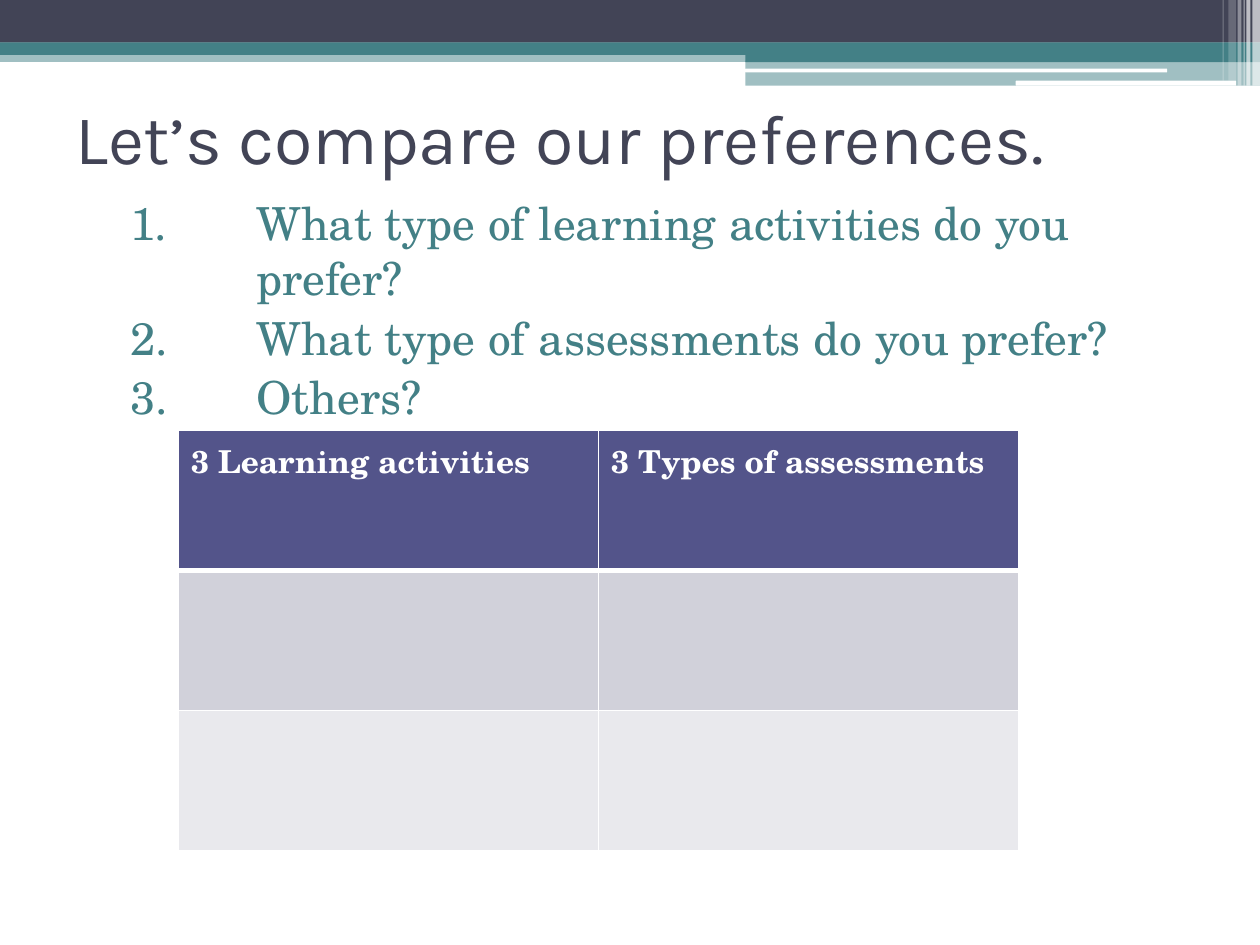
from lxml import etree
from pptx import Presentation
from pptx import util as u
from pptx.dml.color import RGBColor
from pptx.enum import shapes, text
from pptx.oxml import ns

SLATE = RGBColor(0x42, 0x44, 0x56)
TEAL = RGBColor(0x43, 0x80, 0x86)
WHITE = RGBColor(0xFF, 0xFF, 0xFF)
INDIGO = RGBColor(0x53, 0x54, 0x8A)
LAVENDER = RGBColor(0xD1, 0xD1, 0xDA)
PALE = RGBColor(0xE9, 0xE9, 0xED)

HEADING = {"name": "Karla", "size": u.Pt(40), "color": SLATE}
QUESTION = {"name": "TeX Gyre Schola", "size": u.Pt(26), "color": TEAL}
COLUMN_HEAD = {"name": "TeX Gyre Schola", "size": u.Pt(18), "color": WHITE, "bold": True}

RECT = shapes.MSO_SHAPE.RECTANGLE
ROUNDED = shapes.MSO_SHAPE.ROUNDED_RECTANGLE


def add_child(parent, tag, **attributes):
    return etree.SubElement(parent, ns.qn(tag), attributes)


class SlideBuilder:
    def __init__(self, slide):
        self.slide = slide

    def style(self, font, values):
        for key, value in values.items():
            if key == "color":
                font.color.rgb = value
            else:
                setattr(font, key, value)

    def bar(self, left, top, width, height, color, opacity=100, outline=RECT):
        bar = self.slide.shapes.add_shape(outline, *map(u.Pt, (left, top, width, height)))
        bar.shadow.inherit = False
        bar.line.fill.background()
        bar.fill.solid()
        bar.fill.fore_color.rgb = color
        if opacity < 100:
            srgb = bar.fill._xPr.find(".//" + ns.qn("a:srgbClr"))
            add_child(srgb, "a:alpha", val=str(opacity * 1000))

    def text(self, box, lines, values, anchor, numbered=False):
        frame = self.slide.shapes.add_textbox(*map(u.Pt, box)).text_frame
        frame.word_wrap = True
        frame.vertical_anchor = anchor
        for index, line in enumerate(lines):
            paragraph = frame.add_paragraph() if index else frame.paragraphs[0]
            run = paragraph.add_run()
            run.text = line
            self.style(run.font, values)
            if numbered:
                paragraph.space_before = u.Pt(3)
                self.number(paragraph)

    def number(self, paragraph):
        properties = paragraph._p.get_or_add_pPr()
        properties.set("marL", str(u.Pt(103.5)))
        properties.set("indent", str(u.Pt(-72)))
        color = add_child(properties, "a:buClr")
        add_child(color, "a:srgbClr", val=str(TEAL))
        add_child(properties, "a:buFont", typeface=QUESTION["name"])
        add_child(properties, "a:buAutoNum", type="arabicPeriod")

    def table(self, box, headings, row_count, fills):
        grid = self.slide.shapes.add_table(row_count, len(headings), *map(u.Pt, box)).table
        for row in range(row_count):
            for column, heading in enumerate(headings):
                cell = grid.cell(row, column)
                cell.fill.solid()
                cell.fill.fore_color.rgb = fills[row]
                self.borders(cell, top=3 if row == 1 else 1, bottom=1 if row else 3)
                if row == 0:
                    run = cell.text_frame.paragraphs[0].add_run()
                    run.text = heading
                    self.style(run.font, COLUMN_HEAD)

    def borders(self, cell, top, bottom):
        properties = cell._tc.get_or_add_tcPr()
        widths = {"a:lnL": 1, "a:lnR": 1, "a:lnT": top, "a:lnB": bottom}
        for position, (tag, width) in enumerate(widths.items()):
            edge = add_child(properties, tag, w=str(u.Pt(width)))
            add_child(add_child(edge, "a:solidFill"), "a:srgbClr", val=str(WHITE))
            properties.insert(position, edge)


def main():
    deck = Presentation()
    deck.slide_width, deck.slide_height = u.Pt(720), u.Pt(540)
    builder = SlideBuilder(deck.slides.add_slide(deck.slide_layouts[6]))

    builder.bar(0, 28.8, 720, 6.6, TEAL, 50)
    builder.bar(0, 0, 720, 24.4, SLATE)
    builder.bar(0, 24.2, 720, 7.2, TEAL)
    builder.bar(426, 28.3, 294, 7.2, TEAL)
    builder.bar(426, 34.7, 294, 14.2, TEAL, 50)
    builder.bar(425.8, 39.2, 241.2, 2.2, WHITE, outline=ROUNDED)
    builder.bar(580.4, 46.1, 126, 2.9, WHITE, outline=ROUNDED)

    stripes = [
        (715.6, 4.4, 49, 65), (712.3, 2.2, 49, 65), (710.6, 0.7, 49, 60),
        (707.2, 2.2, 49, 40), (702, 4.3, 46.1, 20), (698.6, 0.7, 46.1, 30),
    ]
    for left, width, height, opacity in stripes:
        builder.bar(left, 0, width, height, WHITE, opacity)

    builder.text((36, 36, 648, 84), ["Let’s compare our preferences."],
                 HEADING, text.MSO_ANCHOR.MIDDLE)
    questions = [
        "What type of learning activities do you prefer?",
        "What type of assessments do you prefer?",
        "Others?",
    ]
    builder.text((36, 108, 666, 402), questions, QUESTION, text.MSO_ANCHOR.TOP, numbered=True)
    builder.table((102, 246, 480, 240), ["3 Learning activities", "3 Types of assessments"],
                  3, [INDIGO, LAVENDER, PALE])
    deck.save("out.pptx")


if __name__ == "__main__":
    main()
